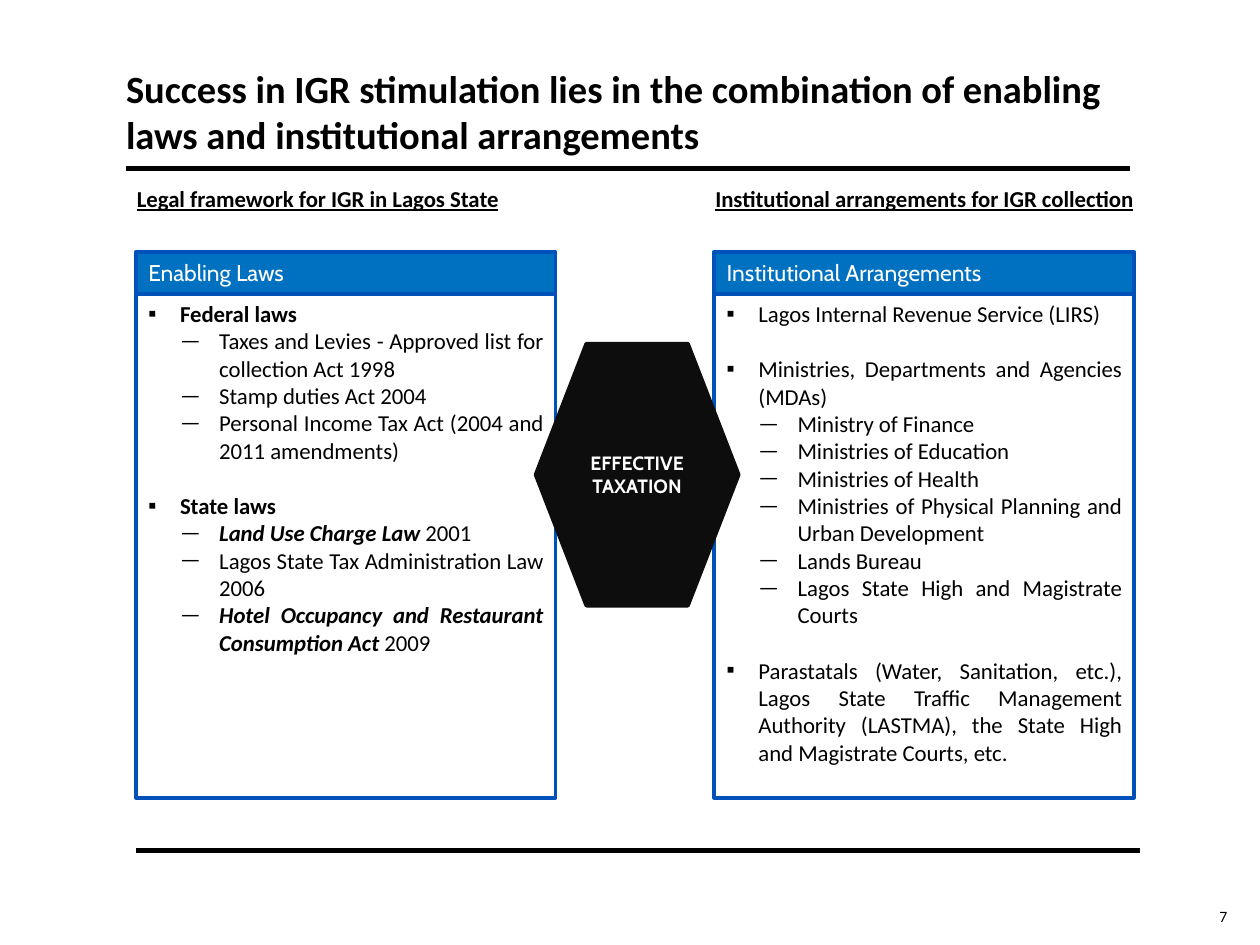
"""Build the slide on enabling laws and institutional arrangements for IGR."""
from lxml.etree import SubElement
from pptx import Presentation
from pptx.dml.color import RGBColor
from pptx.enum.shapes import MSO_CONNECTOR, MSO_SHAPE
from pptx.enum.text import MSO_ANCHOR, MSO_AUTO_SIZE, PP_ALIGN
from pptx.oxml.ns import qn
from pptx.util import Cm, Pt

COLORS = {"black": "000000", "white": "FFFFFF", "border": "0051BA",
          "header": "0070C0", "hexagon": "0D0D0D"}
BULLETS = {1: ("▪", 0.64, 0.64), 2: ("—", 1.43, 0.79)}
COLUMNS = [
    (2.74, "Legal framework for IGR in Lagos State", "Enabling Laws", [
        (1, 0, [("Federal laws", "b")]),
        (2, 0, [("Taxes and Levies - Approved list for collection Act 1998", "")]),
        (2, 0, [("Stamp duties Act 2004", "")]),
        (2, 0, [("Personal Income Tax Act (2004 and 2011 amendments)", "")]),
        (1, 16, [("State laws", "b")]),
        (2, 0, [("Land Use Charge Law ", "bi"), ("2001", "")]),
        (2, 0, [("Lagos State Tax Administration Law 2006", "")]),
        (2, 0, [("Hotel Occupancy and Restaurant Consumption Act ", "bi"), ("2009", "")]),
    ]),
    (14.4, "Institutional arrangements for IGR collection", "Institutional Arrangements", [
        (1, 0, [("Lagos Internal Revenue Service (LIRS)", "")]),
        (1, 16, [("Ministries, Departments and Agencies (MDAs)", "")]),
        (2, 0, [("Ministry of Finance", "")]),
        (2, 0, [("Ministries of Education", "")]),
        (2, 0, [("Ministries of Health", "")]),
        (2, 0, [("Ministries of Physical Planning and Urban Development", "")]),
        (2, 0, [("Lands Bureau", "")]),
        (2, 0, [("Lagos State High and Magistrate Courts", "")]),
        (1, 16, [("Parastatals (Water, Sanitation, etc.), Lagos State Traffic Management "
                  "Authority (LASTMA), the State High and Magistrate Courts, etc.", "")]),
    ]),
]


def add_run(p, text, size, color="black", font="Calibri", style=""):
    r = p.add_run()
    r.text = text
    r.font.name = font
    r.font.size = Pt(size)
    r.font.bold = "b" in style
    r.font.italic = "i" in style
    r.font.underline = "u" in style
    r.font.color.rgb = RGBColor.from_string(COLORS[color])


def add_box(kind, left, top, width, height, fill, line, anchor):
    sp = s.shapes.add_shape(kind, Cm(left), Cm(top), Cm(width), Cm(height))
    sp.shadow.inherit = False
    if fill:
        sp.fill.solid()
        sp.fill.fore_color.rgb = RGBColor.from_string(COLORS[fill])
    else:
        sp.fill.background()
    sp.line.color.rgb = RGBColor.from_string(COLORS[line])
    sp.line.width = Pt(2.25)
    sp.text_frame.word_wrap = True
    sp.text_frame.vertical_anchor = anchor
    return sp.text_frame


prs = Presentation()
prs.slide_width, prs.slide_height = Cm(25.4), Cm(19.05)
s = prs.slides.add_slide(prs.slide_layouts[5])

title = s.shapes.title
title.left, title.top, title.width, title.height = Cm(2.54), Cm(1.6), Cm(20.24), Cm(1.57)
tf = title.text_frame
tf.auto_size = MSO_AUTO_SIZE.NONE
tf.vertical_anchor = MSO_ANCHOR.BOTTOM
tf.margin_left = tf.margin_right = tf.margin_top = tf.margin_bottom = 0
p = tf.paragraphs[0]
p.alignment = PP_ALIGN.LEFT
add_run(p, "Success in IGR stimulation lies in the combination of enabling laws "
           "and institutional arrangements", 22, style="b")

for left, top in [(2.54, 3.4), (2.74, 17.15)]:
    rule = s.shapes.add_connector(MSO_CONNECTOR.STRAIGHT, Cm(left), Cm(top),
                                  Cm(left + 20.24), Cm(top))
    rule.line.color.rgb = RGBColor.from_string(COLORS["black"])
    rule.line.width = Pt(3)
    SubElement(rule._element.spPr, qn("a:effectLst"))

for left, heading, header, items in COLUMNS:
    tf = add_box(MSO_SHAPE.RECTANGLE, left, 5.92, 8.46, 10.16, None, "border", MSO_ANCHOR.TOP)
    for i, (level, gap, runs) in enumerate(items):
        p = tf.paragraphs[0] if i == 0 else tf.add_paragraph()
        char, margin, hang = BULLETS[level]
        p.level = level
        p.alignment = PP_ALIGN.JUSTIFY
        pPr = p._p.get_or_add_pPr()
        pPr.set("marL", str(Cm(margin)))
        pPr.set("indent", str(-Cm(hang)))
        bu_color = SubElement(pPr, qn("a:buClr"))
        SubElement(bu_color, qn("a:srgbClr"), val=COLORS["black"])
        SubElement(pPr, qn("a:buFont"), typeface="Calibri")
        SubElement(pPr, qn("a:buChar"), char=char)
        if gap:
            p.space_before = Pt(gap)
        for text, style in runs:
            add_run(p, text, 13, style=style)

    tf = add_box(MSO_SHAPE.RECTANGLE, left, 5.08, 8.46, 0.84, "header", "border",
                 MSO_ANCHOR.MIDDLE)
    tf.paragraphs[0].alignment = PP_ALIGN.LEFT
    add_run(tf.paragraphs[0], header, 13, "white", "Cabin")

    tf = s.shapes.add_textbox(Cm(left - 0.23), Cm(3.6), Cm(9.09), Cm(0.81)).text_frame
    tf.word_wrap = True
    tf.paragraphs[0].alignment = PP_ALIGN.JUSTIFY
    add_run(tf.paragraphs[0], heading, 13, style="bu")

tf = add_box(MSO_SHAPE.HEXAGON, 10.8, 6.93, 4.09, 5.28, "hexagon", "hexagon", MSO_ANCHOR.MIDDLE)
tf.paragraphs[0].alignment = PP_ALIGN.CENTER
add_run(tf.paragraphs[0], "EFFECTIVE TAXATION", 11, "white", "Cabin", "b")

tf = s.shapes.add_textbox(Cm(24.36), Cm(18.29), Cm(0.38), Cm(0.38)).text_frame
tf.margin_left = tf.margin_right = tf.margin_top = tf.margin_bottom = 0
tf.vertical_anchor = MSO_ANCHOR.BOTTOM
tf.word_wrap = True
tf.paragraphs[0].alignment = PP_ALIGN.RIGHT
add_run(tf.paragraphs[0], "7", 9)

prs.save("out.pptx")
